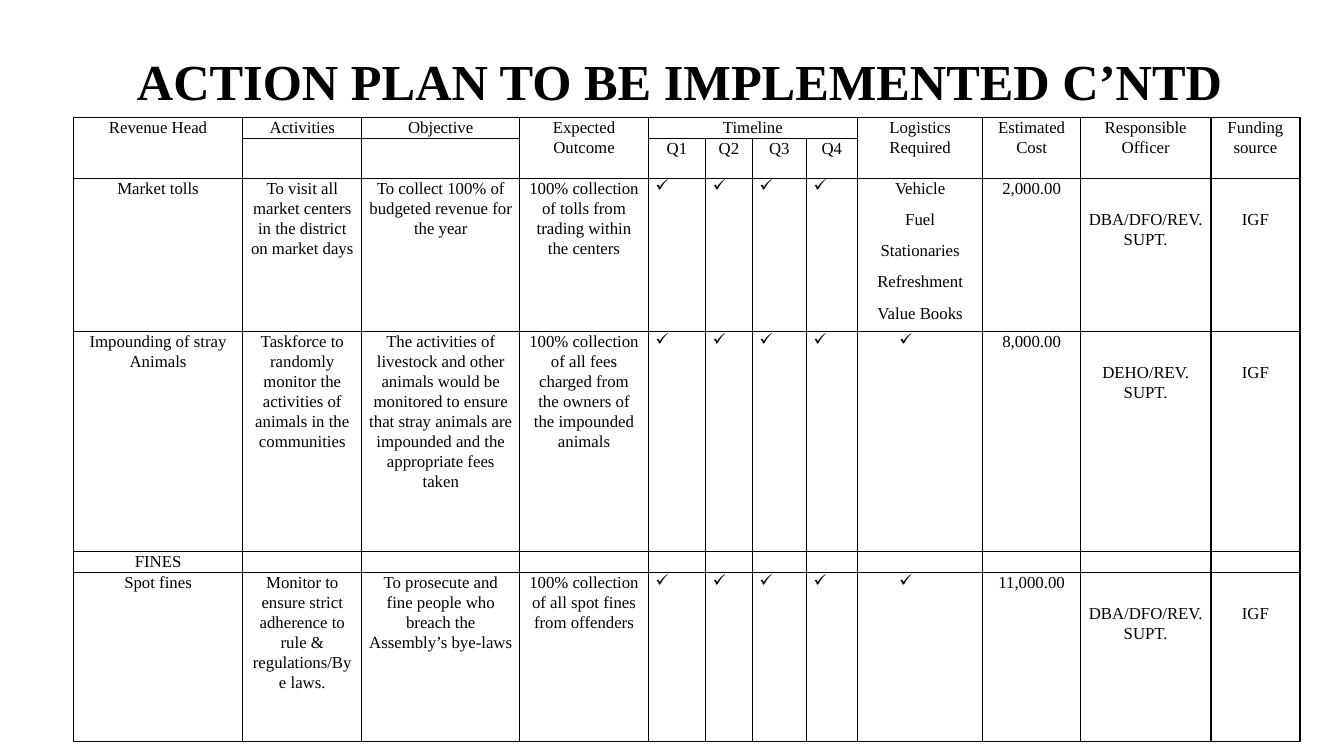
from lxml import etree
from pptx import Presentation
from pptx.dml.color import RGBColor
from pptx.enum.text import MSO_ANCHOR, MSO_AUTO_SIZE, PP_ALIGN
from pptx.oxml.ns import qn
from pptx.util import Cm, Pt

CENTER, LEFT = PP_ALIGN.CENTER, PP_ALIGN.LEFT
BOTTOM, NO_AUTOFIT = MSO_ANCHOR.BOTTOM, MSO_AUTO_SIZE.NONE
TITLE_ONLY = 5

FONT = "Times New Roman"
BLACK = "000000"
TICK = "✓"
TICK_FONT, TICK_CHAR = "Wingdings", "ü"  # the tick's place in the symbol font

COL_WIDTHS = [4.27, 3.0, 3.98, 3.24, 1.44, 1.18, 1.36, 1.29, 3.16, 2.46, 3.29, 2.24]
ROW_HEIGHTS = [0.53, 0.56, 3.86, 5.54, 0.53, 4.27]
QUARTERS = range(4, 8)
LOGISTICS = 8
OFFICER_COLS = (10, 11)
TALL_HEADS = (0, 3, 8, 9, 10, 11)

ROWS = [
    ["Revenue Head", "Activities", "Objective", "Expected Outcome",
     "Timeline", "", "", "", "Logistics Required", "Estimated Cost",
     "Responsible Officer", "Funding source"],
    ["", "", "", "", "Q1", "Q2", "Q3", "Q4", "", "", "", ""],
    ["Market tolls",
     "To visit all market centers in the district on market days",
     "To collect 100% of budgeted revenue for the year",
     "100% collection of tolls from trading within the centers",
     *[TICK] * 4, "Vehicle\nFuel\nStationaries\nRefreshment\nValue Books",
     "2,000.00", "DBA/DFO/REV. SUPT.", "IGF"],
    ["Impounding of stray Animals",
     "Taskforce to randomly monitor the activities of animals in the communities",
     "The activities of livestock and other animals would be monitored to ensure "
     "that stray animals are impounded and the appropriate fees taken",
     "100% collection of all fees charged from the owners of the impounded animals",
     *[TICK] * 5, "8,000.00", "DEHO/REV. SUPT.", "IGF"],
    ["FINES"] + [""] * 11,
    ["Spot fines",
     "Monitor to ensure strict adherence to rule & regulations/Bye laws.",
     "To prosecute and fine people who breach the Assembly’s bye-laws",
     "100% collection of all spot fines from offenders",
     *[TICK] * 5, "11,000.00", "DBA/DFO/REV. SUPT.", "IGF"],
]


def color(hex_string):
    return RGBColor.from_string(hex_string)


def add_run(p, text, size, bold=False):
    r = p.add_run()
    r.text = text
    r.font.name = FONT
    r.font.size = Pt(size)
    r.font.bold = bold
    r.font.color.rgb = color(BLACK)


def add_title(s, text):
    sp = s.shapes.title
    sp.left, sp.top, sp.width, sp.height = Cm(2.84), Cm(0.99), Cm(29.18), Cm(1.96)
    tf = sp.text_frame
    tf.auto_size = NO_AUTOFIT
    tf.vertical_anchor = BOTTOM
    tf.margin_left = Cm(0.61)
    tf.margin_bottom = Cm(0.15)
    p = tf.paragraphs[0]
    p.alignment = LEFT
    add_run(p, text, 36, bold=True)


def set_border(cell, side):
    tc_pr = cell._tc.get_or_add_tcPr()
    ln = etree.SubElement(tc_pr, qn(f"a:ln{side}"), w=str(Pt(1)))
    fill = etree.SubElement(ln, qn("a:solidFill"))
    etree.SubElement(fill, qn("a:srgbClr"), val=BLACK)


def format_cell(cell):
    cell.margin_left = cell.margin_right = Cm(0.18)
    cell.margin_top = cell.margin_bottom = 0
    for side in "LRTB":
        set_border(cell, side)
    cell.fill.background()


def add_tick_bullet(p):
    p_pr = p._p.get_or_add_pPr()
    p_pr.set("marL", str(Cm(0.6)))
    p_pr.set("indent", str(-Cm(0.6)))
    etree.SubElement(p_pr, qn("a:buFont"), typeface=TICK_FONT, charset="2")
    etree.SubElement(p_pr, qn("a:buChar"), char=TICK_CHAR)
    add_run(p, " ", 12)


def fill_cell(cell, text, row, col):
    tf = cell.text_frame
    for i, line in enumerate(text.split("\n")):
        p = tf.add_paragraph() if i else tf.paragraphs[0]
        p.alignment = LEFT if line == TICK else CENTER
        p.line_spacing = 1.07
        p.space_after = Pt(8)
        if line == TICK:
            add_tick_bullet(p)
        elif line:
            add_run(p, line, 12)
        else:
            etree.SubElement(p._p, qn("a:endParaRPr"), sz="1200")
    # Officers and funding sit one line lower; the logistics tick is indented
    if row > 1 and col in OFFICER_COLS and text:
        cell.margin_top = Pt(22.2)
    if col == LOGISTICS and text == TICK:
        cell.margin_left = Cm(1.05)


def add_plan_table(s):
    frame = s.shapes.add_table(len(ROWS), len(COL_WIDTHS), Cm(1.85), Cm(2.96),
                               Cm(sum(COL_WIDTHS)), Cm(sum(ROW_HEIGHTS)))
    table = frame.table
    table.first_row = table.horz_banding = False
    for column, width in zip(table.columns, COL_WIDTHS):
        column.width = Cm(width)
    for table_row, height in zip(table.rows, ROW_HEIGHTS):
        table_row.height = Cm(height)

    for row, texts in enumerate(ROWS):
        for col, text in enumerate(texts):
            cell = table.cell(row, col)
            format_cell(cell)
            fill_cell(cell, text, row, col)

    # Header spans
    for col in TALL_HEADS:
        table.cell(0, col).merge(table.cell(1, col))
    table.cell(0, QUARTERS[0]).merge(table.cell(0, QUARTERS[-1]))


def main():
    prs = Presentation()
    prs.slide_width, prs.slide_height = Cm(33.87), Cm(19.05)
    s = prs.slides.add_slide(prs.slide_layouts[TITLE_ONLY])
    add_plan_table(s)
    add_title(s, "ACTION PLAN TO BE IMPLEMENTED C’NTD")
    prs.save("out.pptx")


if __name__ == "__main__":
    main()
